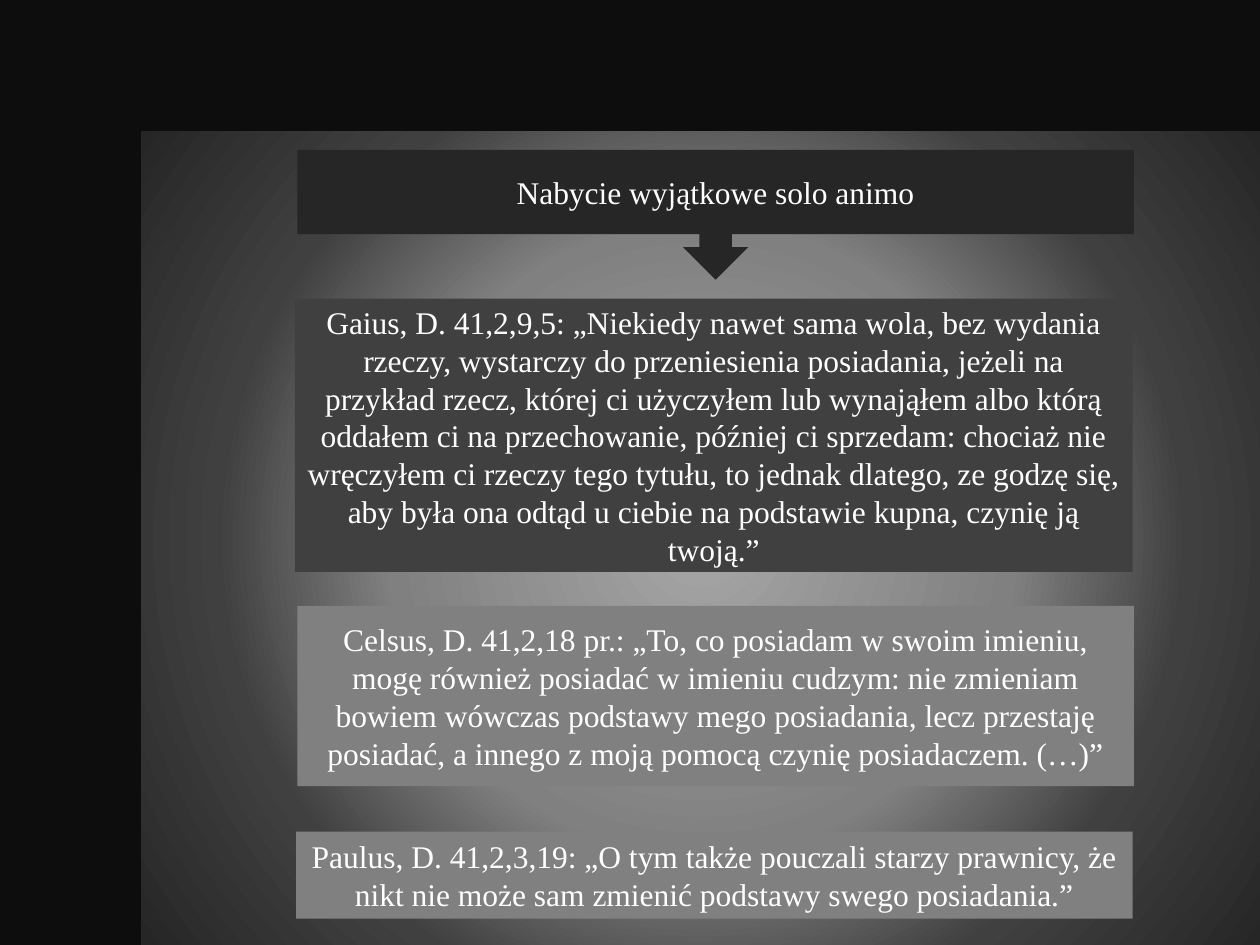
"""Build a slide on acquiring possession by intention alone."""
from pptx import Presentation
from pptx.dml.color import RGBColor
from pptx.enum.shapes import MSO_SHAPE
from pptx.enum.text import MSO_ANCHOR, PP_ALIGN
from pptx.oxml import parse_xml
from pptx.oxml.ns import nsdecls, qn
from pptx.util import Inches, Pt

FONT_NAME = "Times New Roman"
BLACK = RGBColor(0x0D, 0x0D, 0x0D)
CHARCOAL = RGBColor(0x26, 0x26, 0x26)
DARK_GRAY = RGBColor(0x40, 0x40, 0x40)
GRAY = RGBColor(0x80, 0x80, 0x80)
LIGHT_GRAY = RGBColor(0xA6, 0xA6, 0xA6)
WHITE = RGBColor(0xFF, 0xFF, 0xFF)

PANEL_STOPS = [(0, LIGHT_GRAY), (45, GRAY), (70, DARK_GRAY), (100, CHARCOAL)]

TITLE = "Nabycie wyjątkowe solo animo"
GAIUS = (
    "Gaius, D. 41,2,9,5: „Niekiedy nawet sama wola, bez wydania rzeczy, "
    "wystarczy do przeniesienia posiadania, jeżeli na przykład rzecz, której ci "
    "użyczyłem lub wynająłem albo którą oddałem ci na przechowanie, później ci "
    "sprzedam: chociaż nie wręczyłem ci rzeczy tego tytułu, to jednak dlatego, "
    "ze godzę się, aby była ona odtąd u ciebie na podstawie kupna, czynię ją twoją.”"
)
CELSUS = (
    "Celsus, D. 41,2,18 pr.: „To, co posiadam w swoim imieniu, mogę również "
    "posiadać w imieniu cudzym: nie zmieniam bowiem wówczas podstawy mego "
    "posiadania, lecz przestaję posiadać, a innego z moją pomocą czynię "
    "posiadaczem. (…)”"
)
PAULUS = (
    "Paulus, D. 41,2,3,19: „O tym także pouczali starzy prawnicy, że nikt nie "
    "może sam zmienić podstawy swego posiadania.”"
)

BOXES = [
    (MSO_SHAPE.DOWN_ARROW_CALLOUT, (2.36, 1.19, 6.64, 1.03), CHARCOAL, TITLE),
    (MSO_SHAPE.RECTANGLE, (2.34, 2.37, 6.65, 2.17), DARK_GRAY, GAIUS),
    (MSO_SHAPE.RECTANGLE, (2.36, 4.81, 6.64, 1.43), GRAY, CELSUS),
    (MSO_SHAPE.RECTANGLE, (2.35, 6.6, 6.64, 0.69), GRAY, PAULUS),
]


def add_plain_shape(slide, kind, bounds, color):
    """Add a filled shape without outline or shadow."""
    shape = slide.shapes.add_shape(kind, *(Inches(length) for length in bounds))
    shape.shadow.inherit = False
    shape.fill.solid()
    shape.fill.fore_color.rgb = color
    shape.line.fill.background()
    return shape


def apply_radial_gradient(shape, stops):
    """Replace the solid fill with a gradient running out from the centre."""
    stop_xml = "".join(
        f'<a:gs pos="{percent * 1000}"><a:srgbClr val="{color}"/></a:gs>'
        for percent, color in stops
    )
    gradient = parse_xml(
        f'<a:gradFill {nsdecls("a")} rotWithShape="1"><a:gsLst>{stop_xml}</a:gsLst>'
        '<a:path path="circle"><a:fillToRect l="50000" t="50000" r="50000" b="50000"/>'
        "</a:path></a:gradFill>"
    )
    properties = shape.element.spPr
    properties.replace(properties.find(qn("a:solidFill")), gradient)


def add_text_box(slide, kind, bounds, color, text):
    """Add a shape with centred white text."""
    shape = add_plain_shape(slide, kind, bounds, color)
    frame = shape.text_frame
    frame.word_wrap = True
    frame.vertical_anchor = MSO_ANCHOR.MIDDLE
    paragraph = frame.paragraphs[0]
    paragraph.alignment = PP_ALIGN.CENTER
    run = paragraph.add_run()
    run.text = text
    run.font.name = FONT_NAME
    run.font.size = Pt(18)
    run.font.color.rgb = WHITE


def main():
    """Build and save the presentation."""
    presentation = Presentation()
    presentation.slide_width = Inches(10)
    presentation.slide_height = Inches(7.5)
    slide = presentation.slides.add_slide(presentation.slide_layouts[6])
    slide.background.fill.solid()
    slide.background.fill.fore_color.rgb = BLACK
    panel = add_plain_shape(slide, MSO_SHAPE.RECTANGLE, (1.12, 1.04, 8.9, 6.46), GRAY)
    apply_radial_gradient(panel, PANEL_STOPS)
    for box in BOXES:
        add_text_box(slide, *box)
    presentation.save("out.pptx")


if __name__ == "__main__":
    main()
